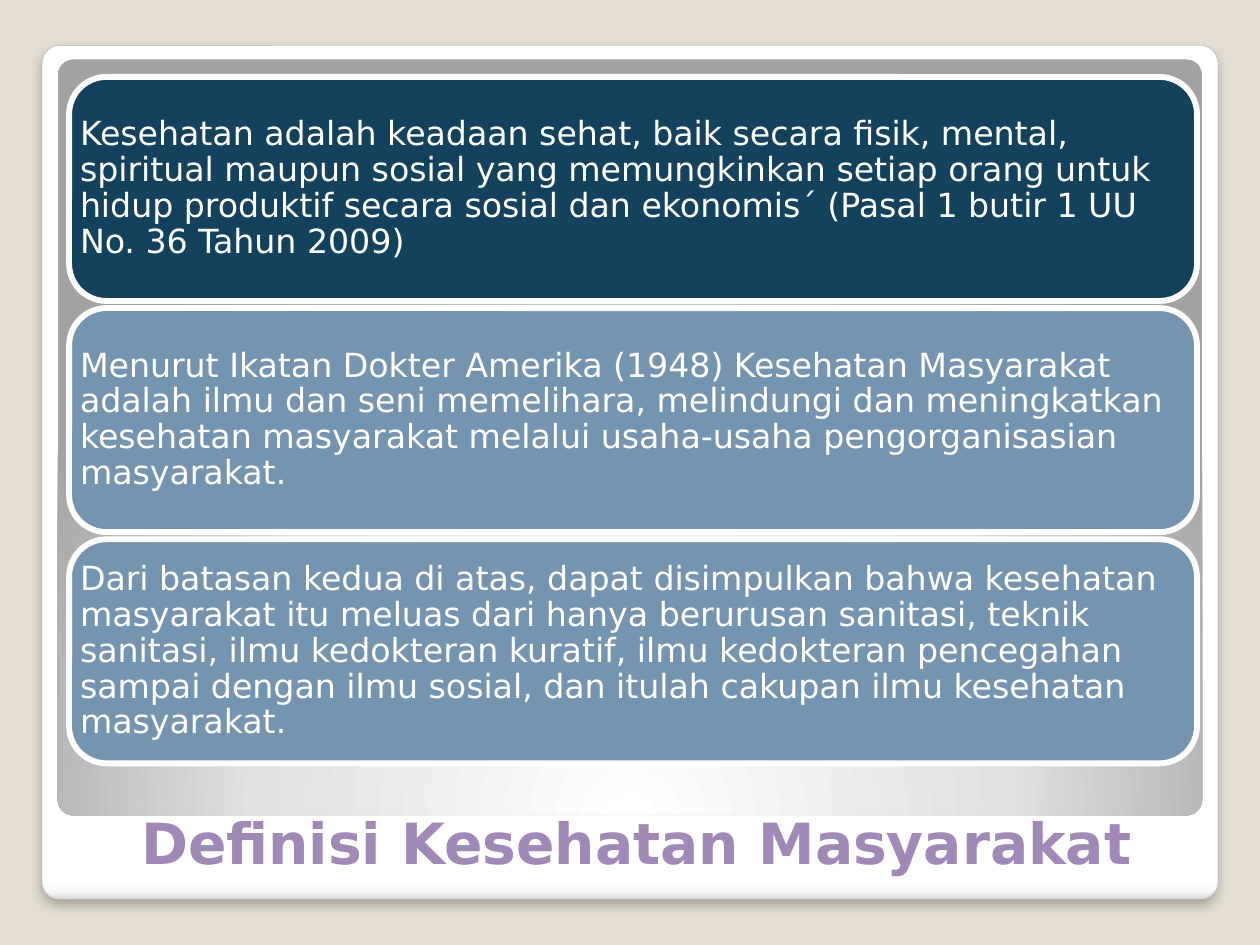
from pptx import Presentation
from pptx.dml.color import RGBColor
from pptx.enum.shapes import MSO_SHAPE as Shape
from pptx.enum.text import MSO_ANCHOR as Anchor, MSO_AUTO_SIZE as AutoSize, PP_ALIGN as Align
from pptx.oxml import parse_xml
from pptx.util import Pt

TITLE = "Definisi Kesehatan Masyarakat"
DEFINITIONS = [
    ("Kesehatan adalah keadaan sehat, baik secara fisik, mental, spiritual maupun sosial "
     "yang memungkinkan setiap orang untuk hidup produktif secara sosial dan ekonomis´ "
     "(Pasal 1 butir 1 UU No. 36 Tahun 2009)", "lead"),
    ("Menurut Ikatan Dokter Amerika (1948) Kesehatan Masyarakat adalah ilmu dan seni "
     "memelihara, melindungi dan meningkatkan kesehatan masyarakat melalui usaha-usaha "
     "pengorganisasian masyarakat.", "follow"),
    ("Dari batasan kedua di atas, dapat disimpulkan bahwa kesehatan masyarakat itu meluas "
     "dari hanya berurusan sanitasi, teknik sanitasi, ilmu kedokteran kuratif, ilmu "
     "kedokteran pencegahan sampai dengan ilmu sosial, dan itulah cakupan ilmu kesehatan "
     "masyarakat.", "follow"),
]
THEME = {
    "font": "DejaVu Sans", "title_size": 32.4, "body_size": 19,
    "background": "E3DED1", "title": "A088B7", "text": "FFFFFF",
    "lead": "14415C", "follow": "7594B0", "border": "FFFFFF", "card_line": "A4A4A4",
    "card_stops": [(0, "FFFFFF"), (98, "FFFFFF"), (99, "F7F7F7"), (100, "DADADA")],
    "panel_stops": [(0, "FFFFFF"), (55, "E1E1E1"), (100, "A2A2A2")],
}
# left, top, width, height in points
CARD = (24, 26, 672, 488)
PANEL = (33, 34, 654, 432)
TITLE_BOX = (41.5, 455, 644.5, 49)
FIRST_BOX = (39.5, 44, 644.5, 128)
BOX_STEP = 132.1
CARD_ROUNDING = 0.021
NS = 'xmlns:a="http://schemas.openxmlformats.org/drawingml/2006/main"'
DOWNWARD = '<a:lin ang="5400000" scaled="0"/>'
FROM_BELOW = ('<a:path path="circle"><a:fillToRect l="50000" t="175000" '
              'r="50000" b="-75000"/></a:path>')


def rgb(name):
    return RGBColor.from_string(THEME[name])


def add_round_box(slide, box, rounding=None):
    sp = slide.shapes.add_shape(Shape.ROUNDED_RECTANGLE, *map(Pt, box))
    sp.shadow.inherit = False
    if rounding is not None:
        sp.adjustments[0] = rounding
    return sp


def set_line(sp, color, width):
    sp.line.color.rgb = rgb(color)
    sp.line.width = Pt(width)


def set_gradient(sp, stops, direction):
    marks = "".join(f'<a:gs pos="{pos * 1000}"><a:srgbClr val="{color}"/></a:gs>'
                    for pos, color in stops)
    sp._element.spPr.prstGeom.addnext(parse_xml(
        f'<a:gradFill {NS} rotWithShape="1"><a:gsLst>{marks}</a:gsLst>{direction}</a:gradFill>'))


def add_soft_shadow(sp):
    effects = sp._element.spPr.find("{*}effectLst")
    effects.append(parse_xml(
        f'<a:outerShdw {NS} blurRad="{Pt(6)}" dist="{Pt(4)}" dir="5400000" rotWithShape="0">'
        '<a:srgbClr val="000000"><a:alpha val="25000"/></a:srgbClr></a:outerShdw>'))


def write(sp, text, frame, para, font, color):
    """Fill a shape with one paragraph, formatted from dicts of values."""
    tf = sp.text_frame
    p = tf.paragraphs[0]
    r = p.add_run()
    r.text = text
    for target, values in ((tf, frame), (p, para), (r.font, font)):
        for key, value in values.items():
            setattr(target, key, value)
    r.font.color.rgb = rgb(color)


def add_frame(slide):
    card = add_round_box(slide, CARD, CARD_ROUNDING)
    set_gradient(card, THEME["card_stops"], DOWNWARD)
    set_line(card, "card_line", 0.16)
    add_soft_shadow(card)
    panel = add_round_box(slide, PANEL, CARD_ROUNDING)
    set_gradient(panel, THEME["panel_stops"], FROM_BELOW)
    panel.line.fill.background()


def add_definitions(slide):
    left, top, width, height = FIRST_BOX
    frame = {"word_wrap": True, "vertical_anchor": Anchor.MIDDLE, "margin_left": 0,
             "margin_right": 0, "margin_top": 0, "margin_bottom": 0}
    para = {"alignment": Align.LEFT, "line_spacing": 0.9}
    font = {"name": THEME["font"], "size": Pt(THEME["body_size"])}
    for i, (text, fill) in enumerate(DEFINITIONS):
        sp = add_round_box(slide, (left, top + i * BOX_STEP, width, height))
        sp.fill.solid()
        sp.fill.fore_color.rgb = rgb(fill)
        set_line(sp, "border", 3.35)
        write(sp, text, frame, para, font, "text")


def place_title(slide):
    title = slide.shapes.title
    title.left, title.top, title.width, title.height = map(Pt, TITLE_BOX)
    write(title, TITLE,
          {"word_wrap": True, "vertical_anchor": Anchor.BOTTOM, "auto_size": AutoSize.NONE},
          {"alignment": Align.CENTER},
          {"name": THEME["font"], "size": Pt(THEME["title_size"]), "bold": True}, "title")
    slide.shapes._spTree.append(title._element)  # in front of the panel


def main():
    prs = Presentation()
    prs.slide_width, prs.slide_height = Pt(720), Pt(540)
    slide = prs.slides.add_slide(prs.slide_layouts[5])
    slide.background.fill.solid()
    slide.background.fill.fore_color.rgb = rgb("background")
    add_frame(slide)
    add_definitions(slide)
    place_title(slide)
    prs.save("out.pptx")


if __name__ == "__main__":
    main()
